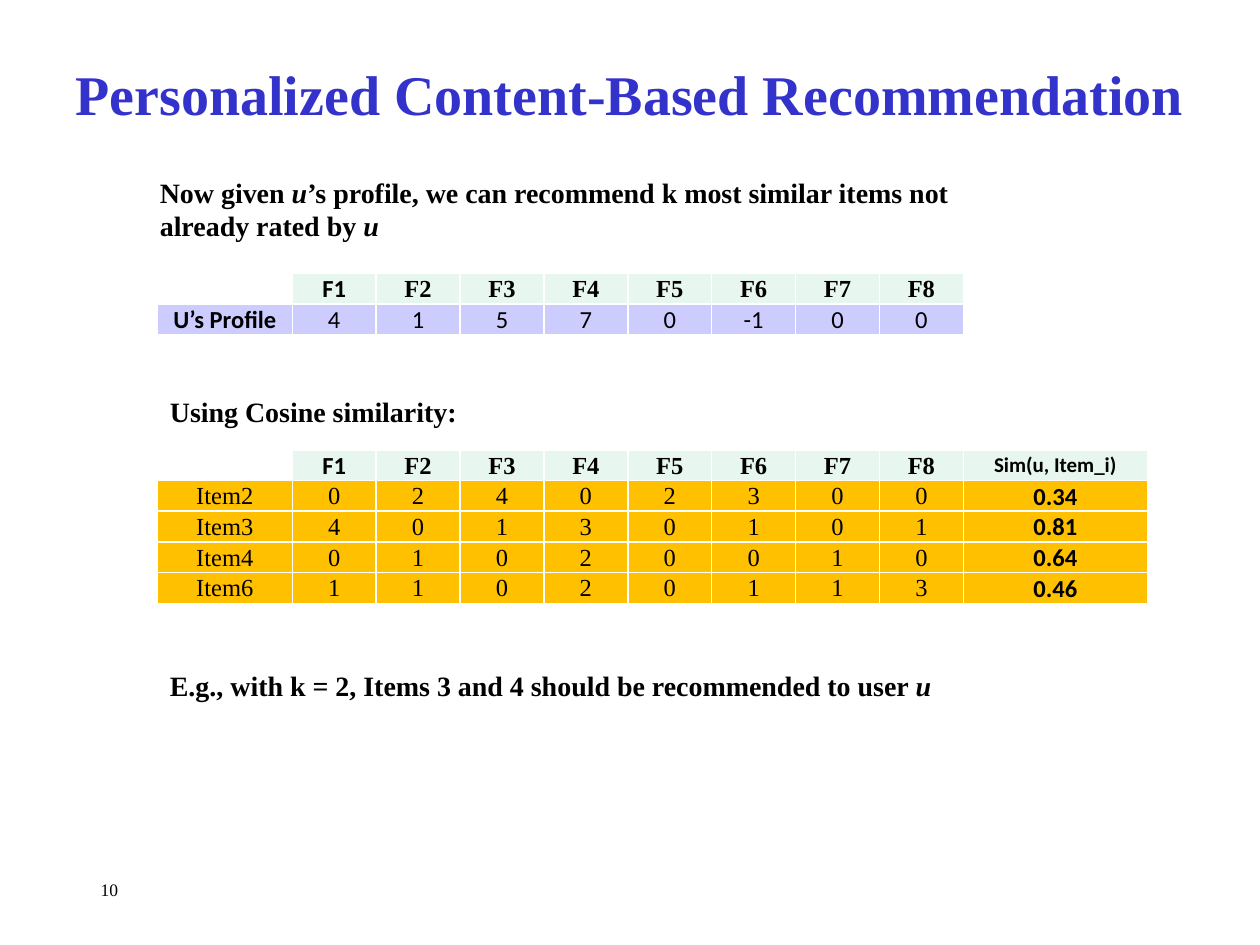
from lxml import etree
from pptx import Presentation
from pptx import util as u
from pptx.dml.color import RGBColor
from pptx.enum import text
from pptx.oxml.ns import qn

COLORS = {"title": "3333CC", "ink": "000000", "white": "FFFFFF",
          "header": "E7F6EF", "profile": "CCCCFF", "item": "FFC000"}
SERIF, SANS = "Times New Roman", "Calibri"

deck = Presentation()
deck.slide_width, deck.slide_height = u.Inches(10), u.Inches(7.5)
slide = deck.slides.add_slide(deck.slide_layouts[5])

# Positions are percentages of the slide's width and height
X, Y = deck.slide_width / 100, deck.slide_height / 100
MARGIN = 12.5
LABEL_COL, FEATURE_COL, SCORE_COL = 10.7, 6.66, 14.6
ROW = 3.25


def add_run(paragraph, words, size, font=SERIF, color="ink", bold=True, italic=False):
    run = paragraph.add_run()
    run.text = words
    run.font.name, run.font.size = font, u.Pt(size)
    run.font.bold, run.font.italic = bold, italic
    run.font.color.rgb = RGBColor.from_string(COLORS[color])


def add_grid(top, rows, widths, body_color, style):
    """Draw a table; style(row, column) gives font, size and bold of a cell."""
    frame = slide.shapes.add_table(len(rows), len(widths), int(MARGIN * X), int(top * Y),
                                   int(sum(widths) * X), int(len(rows) * ROW * Y))
    grid = frame.table
    grid.first_row = grid.horz_banding = False
    for column, width in zip(grid.columns, widths):
        column.width = int(width * X)
    for r, values in enumerate(rows):
        grid.rows[r].height = int(ROW * Y)
        for c, value in enumerate(values):
            cell = grid.cell(r, c)
            cell.margin_left = cell.margin_right = cell.margin_top = u.Inches(0.01)
            cell.margin_bottom = 0
            cell.vertical_anchor = text.MSO_ANCHOR.MIDDLE
            paragraph = cell.text_frame.paragraphs[0]
            paragraph.alignment = text.PP_ALIGN.CENTER
            if value:
                font, size, bold = style(r, c)
                add_run(paragraph, value, size, font, bold=bold)
            else:
                etree.SubElement(paragraph._p, qn("a:endParaRPr"), sz="1200")
            # White borders go before the fill in the cell properties
            properties = cell._tc.get_or_add_tcPr()
            for side in ("a:lnL", "a:lnR", "a:lnT", "a:lnB"):
                line = etree.SubElement(properties, qn(side), w=str(u.Pt(1)))
                solid = etree.SubElement(line, qn("a:solidFill"))
                etree.SubElement(solid, qn("a:srgbClr"), val=COLORS["white"])
            fill = body_color if r else "header" if value else "white"
            cell.fill.solid()
            cell.fill.fore_color.rgb = RGBColor.from_string(COLORS[fill])


# Title
title = slide.shapes.title
title.left, title.top = int(4.4 * X), int(4.27 * Y)
title.width, title.height = int(91.2 * X), int(11.07 * Y)
title.text_frame.vertical_anchor = text.MSO_ANCHOR.MIDDLE
heading = title.text_frame.paragraphs[0]
heading.alignment = text.PP_ALIGN.CENTER
add_run(heading, "Personalized Content-Based Recommendation", 32, color="title")

# Statements and page number: left, top, width, height, size, bold, (words, italic) runs
statements = [
    (11.7, 17.87, 69.1, 8.53, 16, True, [
        ("Now given ", False), ("u", True),
        ("’s profile, we can recommend k most similar items not already rated by ", False),
        ("u", True)]),
    (MARGIN, 41.07, 69.1, 4.93, 16, True, [("Using Cosine similarity:", False)]),
    (MARGIN, 70.13, 69.1, 4.93, 16, True, [
        ("E.g., with k = 2, Items 3 and 4 should be recommended to user ", False),
        ("u", True)]),
    (7, 92.4, 37.5, 3.33, 10, False, [("10", False)]),
]
for left, top, width, height, size, bold, runs in statements:
    statement = slide.shapes.add_textbox(int(left * X), int(top * Y),
                                         int(width * X), int(height * Y))
    statement.text_frame.word_wrap = True
    for words, italic in runs:
        add_run(statement.text_frame.paragraphs[0], words, size, bold=bold, italic=italic)

# User profile
features = [""] + [f"F{n}" for n in range(1, 9)]
feature_widths = [LABEL_COL] + [FEATURE_COL] * 8
profile = ["U’s Profile", "4", "1", "5", "7", "0", "-1", "0", "0"]
add_grid(28.93, [features, profile], feature_widths, "profile",
         lambda r, c: (SANS if r or c == 1 else SERIF, 14, r == 0 or c == 0))

# Items with their similarity to the profile
items = [
    ("Item2", "02402300", "0.34"),
    ("Item3", "40130101", "0.81"),
    ("Item4", "01020010", "0.64"),
    ("Item6", "11020113", "0.46"),
]
item_rows = [features + ["Sim(u, Item_i)"]]
item_rows += [[name, *ratings, score] for name, ratings, score in items]
add_grid(47.6, item_rows, feature_widths + [SCORE_COL], "item",
         lambda r, c: (SANS if c == 9 or (r, c) == (0, 1) else SERIF,
                       12 if (r, c) == (0, 9) else 14, r == 0 or c == 9))

deck.save("out.pptx")
